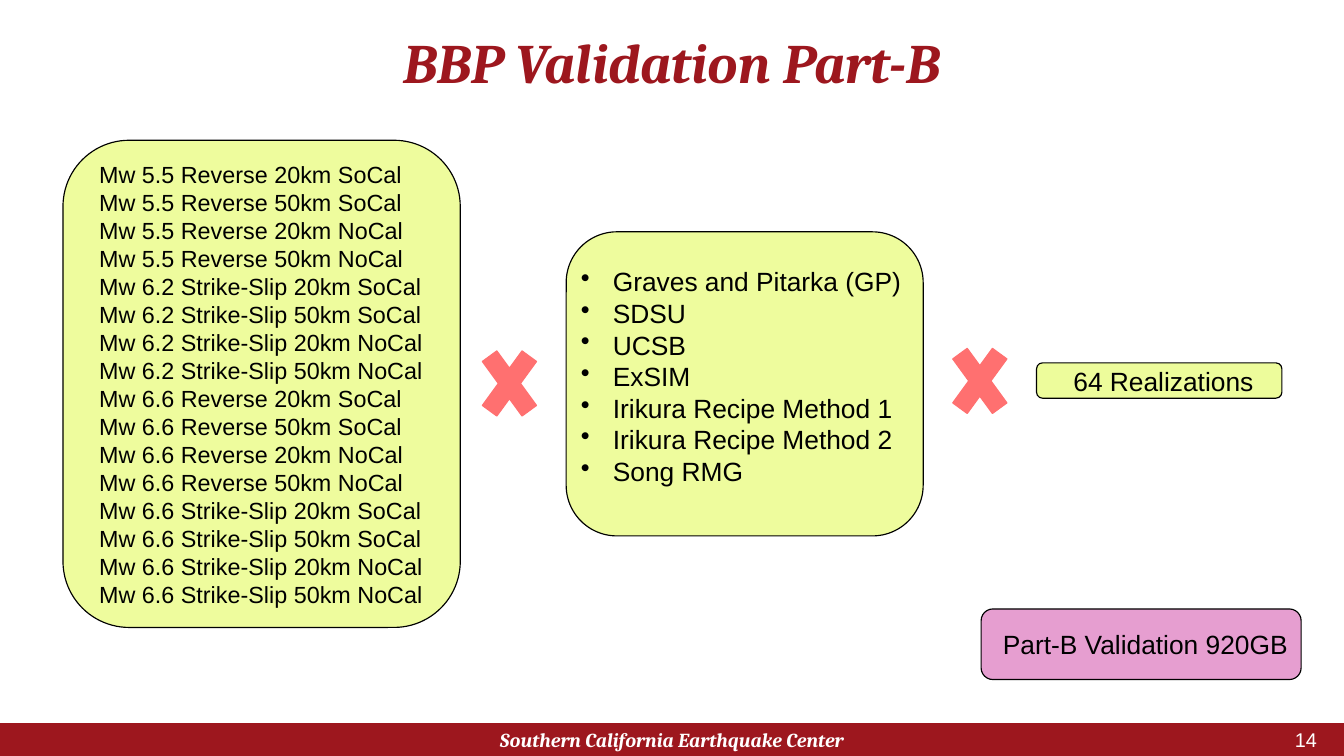
from itertools import product
from lxml import etree
from pptx import Presentation
from pptx.dml.color import RGBColor
from pptx.enum import shapes, text
from pptx.oxml import ns
from pptx.util import Pt

RED = RGBColor(0x9D, 0x17, 0x1E)
CORAL = RGBColor(0xFF, 0x70, 0x70)
LIME = RGBColor(0xDD, 0xFA, 0x38)
ORCHID = RGBColor(0xCE, 0x3F, 0xA3)
BLACK = RGBColor(0, 0, 0)
WHITE = RGBColor(0xFF, 0xFF, 0xFF)

TITLE = "BBP Validation Part-B"
FOOTER = "Southern California Earthquake Center"
PAGE_NUMBER = "14"
QUAKES = ["Mw 5.5 Reverse", "Mw 6.2 Strike-Slip", "Mw 6.6 Reverse", "Mw 6.6 Strike-Slip"]
REGIONS = ["SoCal", "NoCal"]
DISTANCES = ["20km", "50km"]
METHODS = ["Graves and Pitarka (GP)", "SDSU", "UCSB", "ExSIM",
           "Irikura Recipe Method 1", "Irikura Recipe Method 2", "Song RMG"]
SCENARIOS = [f"{quake} {distance} {region}"
             for quake, region, distance in product(QUAKES, REGIONS, DISTANCES)]

LEFT, CENTER, RIGHT = text.PP_ALIGN.LEFT, text.PP_ALIGN.CENTER, text.PP_ALIGN.RIGHT
TEXT_INSETS = (8.64, 4.32, 8.64, 4.32)

PANELS = [
    (SCENARIOS, (54, 120.24, 340.56, 417.6), LIME, 49,
     dict(size=20, margin=14.4)),
    (METHODS, (485.28, 198.72, 306, 260.64), LIME, 49,
     dict(margin=27.36, bullet="•", insets=(0, 14.4, 0, 27.6))),
    (["Part-B Validation 920GB"], (840.96, 522, 274.32, 60.48), ORCHID, 50,
     dict(margin=7.2, align=CENTER)),
    (["64 Realizations"], (888.48, 311.04, 210.24, 30.24), LIME, 50,
     dict(margin=7.2, align=CENTER)),
]
TIMES_SIGNS = [(403.92, 283.68, 65.52, 90), (807.12, 281.52, 65.52, 90)]


def write(box, lines, size=22.6, font="Arial", color=BLACK, strong=False,
          align=LEFT, margin=0, bullet=None, insets=(0, 0, 0, 0), spacing=1.0):
    frame = box.text_frame
    frame.word_wrap = True
    frame.auto_size = text.MSO_AUTO_SIZE.NONE
    frame.vertical_anchor = text.MSO_ANCHOR.MIDDLE
    (frame.margin_left, frame.margin_top,
     frame.margin_right, frame.margin_bottom) = map(Pt, insets)
    frame.text = "\n".join(lines)
    for para in frame.paragraphs:
        para.alignment = align
        para.line_spacing = spacing
        para.space_before = para.space_after = Pt(0)
        props = para._p.get_or_add_pPr()
        props.set("marL", str(Pt(margin)))
        props.set("indent", str(Pt(-margin if bullet else 0)))
        if bullet:
            etree.SubElement(props, ns.qn("a:buChar")).set("char", bullet)
        for span in para.runs:
            span.font.name = font
            span.font.size = Pt(size)
            span.font.bold = span.font.italic = strong
            span.font.color.rgb = color


def add_block(page, kind, place, fill, line=None, opacity=100):
    box = page.shapes.add_shape(kind, *map(Pt, place))
    box.shadow.inherit = False
    box.fill.solid()
    box.fill.fore_color.rgb = fill
    if opacity < 100:
        tint = box._element.spPr.find(ns.qn("a:solidFill")).find(ns.qn("a:srgbClr"))
        etree.SubElement(tint, ns.qn("a:alpha")).set("val", str(opacity * 1000))
    if line is None:
        box.line.fill.background()
    else:
        box.line.color.rgb = line
        box.line.width = Pt(1)
    return box


def main():
    deck = Presentation()
    deck.slide_width, deck.slide_height = Pt(1152), Pt(648)
    page = deck.slides.add_slide(deck.slide_layouts[5])

    title = page.shapes.title
    title.left, title.top, title.width, title.height = map(Pt, (28.8, 25.92, 1094.4, 60.48))
    write(title, [TITLE], size=47.7, font="Cambria", color=RED, strong=True,
          align=CENTER, insets=TEXT_INSETS, spacing=0.9)

    add_block(page, shapes.MSO_SHAPE.RECTANGLE, (0, 619.92, 1152, 28.08), RED)
    footer = page.shapes.add_textbox(*map(Pt, (381.6, 617.04, 388.8, 34.56)))
    write(footer, [FOOTER], size=17, font="Cambria", color=WHITE, strong=True,
          align=CENTER, insets=TEXT_INSETS)
    number = page.shapes.add_textbox(*map(Pt, (1029.6, 625.68, 108, 17.28)))
    write(number, [PAGE_NUMBER], size=17, color=WHITE, align=RIGHT, insets=TEXT_INSETS)

    for place in TIMES_SIGNS:
        add_block(page, shapes.MSO_SHAPE.MATH_MULTIPLY, place, CORAL, line=CORAL)
    for lines, place, fill, opacity, style in PANELS:
        panel = add_block(page, shapes.MSO_SHAPE.ROUNDED_RECTANGLE, place, fill,
                          line=BLACK, opacity=opacity)
        write(panel, lines, **style)

    deck.save("out.pptx")


if __name__ == "__main__":
    main()
